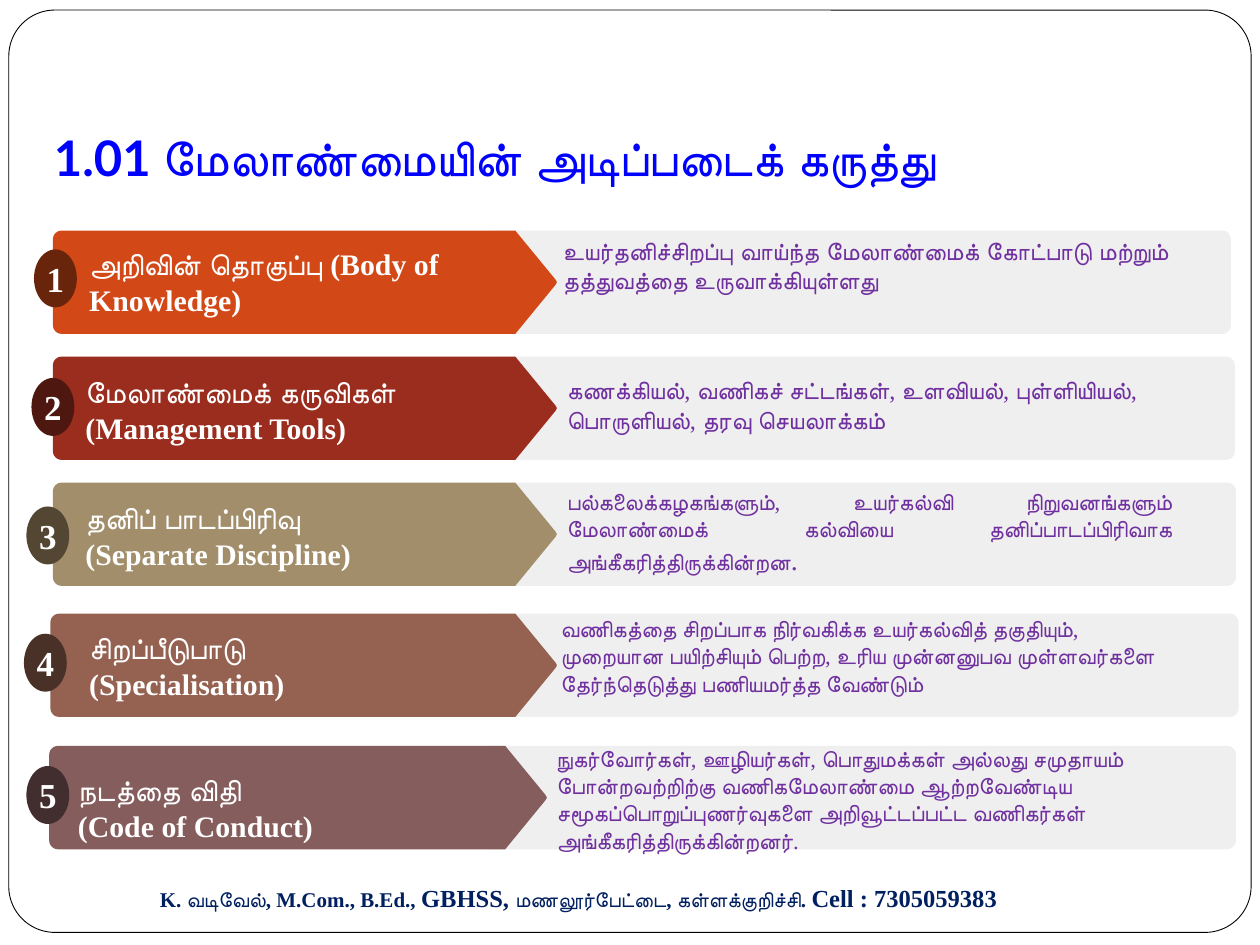
from math import cos, radians, sin

from pptx import Presentation
from pptx.dml.color import RGBColor
from pptx.enum.shapes import MSO_SHAPE
from pptx.enum.text import MSO_ANCHOR, PP_ALIGN
from pptx.util import Pt

ROUND, OVAL = MSO_SHAPE.ROUNDED_RECTANGLE, MSO_SHAPE.OVAL
TOP, MIDDLE, BOTTOM = MSO_ANCHOR.TOP, MSO_ANCHOR.MIDDLE, MSO_ANCHOR.BOTTOM
LEFT, CENTER, JUSTIFY = PP_ALIGN.LEFT, PP_ALIGN.CENTER, PP_ALIGN.JUSTIFY

PX = 9144  # 100 px to the inch
RADIUS = 7
SERIF = "Times New Roman"
COLORS = {
    "white": "FFFFFF", "black": "000000", "title": "0000FF",
    "panel": "EFEFEF", "body": "7030A0", "footer": "002060",
}

# box, tip of the arrow, arrow and badge colours, badge offset,
# label offset and width, label, body offset and width, size, alignment, body
ROWS = [
    ((42, 183, 935, 82), 400, "D34817", "69240C", (-15, 15),
     (19, 7, 333), "அறிவின் தொகுப்பு (Body of Knowledge)",
     (395, -1, 500), 14, JUSTIFY,
     "உயர்தனிச்சிறப்பு வாய்ந்த மேலாண்மைக் கோட்பாடு மற்றும் தத்துவத்தை "
     "உருவாக்கியுள்ளது"),
    ((42, 283, 938, 82), 400, "9B2D1F", "4E1710", (-17, 17),
     (16, 9, 392), "மேலாண்மைக் கருவிகள் (Management Tools)",
     (398, 10, 508), 14, LEFT,
     "கணக்கியல், வணிகச் சட்டங்கள், உளவியல், புள்ளியியல், பொருளியல், "
     "தரவு செயலாக்கம்"),
    ((42, 383, 939, 82), 400, "A28E6A", "534733", (-21, 19),
     (16, 9, 292), "தனிப் பாடப்பிரிவு (Separate Discipline)",
     (398, -1, 500), 13, JUSTIFY,
     "பல்கலைக்கழகங்களும், உயர்கல்வி நிறுவனங்களும் மேலாண்மைக் கல்வியை "
     "தனிப்பாடப்பிரிவாக அங்கீகரித்திருக்கின்றன"),
    ((40, 487, 943, 82), 402, "956251", "4A3128", (-21, 16),
     (21, 8, 312), "சிறப்பீடுபாடு\n(Specialisation)",
     (395, -4, 508), 13, LEFT,
     "வணிகத்தை சிறப்பாக நிர்வகிக்க உயர்கல்வித் தகுதியும், முறையான "
     "பயிற்சியும் பெற்ற, உரிய முன்னனுபவ முள்ளவர்களை தேர்ந்தெடுத்து "
     "பணியமர்த்த வேண்டும்"),
    ((39, 592, 942, 82), 395, "855D5D", "422E2E", (-18, 16),
     (13, 16, 352), "நடத்தை விதி\n(Code of Conduct)",
     (393, -6, 560), 13, LEFT,
     "நுகர்வோர்கள், ஊழியர்கள், பொதுமக்கள் அல்லது சமுதாயம் "
     "போன்றவற்றிற்கு வணிகமேலாண்மை ஆற்றவேண்டிய "
     "சமூகப்பொறுப்புணர்வுகளை அறிவூட்டப்பட்ட வணிகர்கள் "
     "அங்கீகரித்திருக்கின்றனர்."),
]


def emu(*values):
    return [round(v * PX) for v in values]


def rgb(color):
    return RGBColor.from_string(COLORS.get(color, color))


def paint(shape, fill):
    shape.shadow.inherit = False
    shape.fill.solid()
    shape.fill.fore_color.rgb = rgb(fill)
    shape.line.fill.background()
    return shape


def style(frame, size, color, bold=False, align=LEFT, font=SERIF):
    for para in frame.paragraphs:
        para.alignment = align
        para.font.name = font
        para.font.size = Pt(size)
        para.font.bold = bold
        para.font.color.rgb = rgb(color)


def add_text(slide, box, words, size, color, anchor=TOP, **looks):
    frame = slide.shapes.add_textbox(*emu(*box)).text_frame
    frame.word_wrap = True
    frame.vertical_anchor = anchor
    frame.text = words
    style(frame, size, color, **looks)
    return frame


def add_runs(para, parts):
    for words, size in parts:
        run = para.add_run()
        run.text = words
        run.font.size = Pt(size)


def arc(x, y, start):
    """Points of a quarter circle about x, y, clockwise from a start angle."""
    angles = [radians(start + step) for step in range(0, 91, 15)]
    return [(x + RADIUS * cos(a), y + RADIUS * sin(a)) for a in angles]


def outline(slide, points, fill):
    first, *rest = [emu(*point) for point in points]
    builder = slide.shapes.build_freeform(*first, scale=1.0)
    builder.add_line_segments(rest, close=True)
    paint(builder.convert_to_shape(), fill)


def panel(slide, box):
    x, y, w, h = box
    edge = x + w - RADIUS
    points = [(x, y + h), (x, y)]
    points += arc(edge, y + RADIUS, -90) + arc(edge, y + h - RADIUS, 0)
    outline(slide, points, "panel")


def arrow(slide, box, fill):
    x, y, w, h = box
    tip, neck, mid = x + w, x + w - 33, y + h / 2
    points = arc(x + RADIUS, y + h - RADIUS, 90)
    points += arc(x + RADIUS, y + RADIUS, 180)
    points += [(neck, y), (tip - 1, mid - 2), (tip, mid),
               (tip - 1, mid + 2), (neck, y + h)]
    outline(slide, points, fill)


def badge(slide, box, number, fill):
    shape = paint(slide.shapes.add_shape(OVAL, *emu(*box)), fill)
    frame = shape.text_frame
    frame.margin_left = frame.margin_right = 0
    frame.margin_top = frame.margin_bottom = 0
    frame.word_wrap = False
    frame.vertical_anchor = MIDDLE
    frame.text = str(number)
    style(frame, 20, "white", bold=True, align=CENTER)


def add_row(slide, number, box, tip, fill, dark, spot, head, label,
            side, size, align, body):
    x, y, w, h = box
    panel(slide, (x + 349, y, w - 349, h))
    frame = add_text(slide, (x + side[0], y + side[1], side[2], h),
                     body, size, "body", align=align)
    arrow(slide, (x, y, tip, h), fill)
    badge(slide, (x + spot[0], y + spot[1], 34, 46), number, dark)
    add_text(slide, (x + head[0], y + head[1], head[2], 67),
             label, 17, "white", bold=True)
    return frame


def add_frame(slide, box):
    shape = paint(slide.shapes.add_shape(ROUND, *emu(*box)), "white")
    shape.adjustments[0] = 0.05
    shape.line.color.rgb = rgb("black")
    shape.line.width = Pt(0.5)


def add_title(slide, box):
    frame = add_text(slide, box, "1.01 மேலாண்மையின் அடிப்படைக் கருத்து",
                     28, "title", BOTTOM, bold=True, font="Lato")
    frame.margin_bottom = 10 * PX


def add_footer(slide, box):
    frame = add_text(slide, box, "", 12, "footer", bold=True)
    add_runs(frame.paragraphs[0], [
        ("K. வடிவேல், M.Com., B.Ed., ", 12), ("GBHSS, ", 14),
        ("மணலூர்பேட்டை, கள்ளக்குறிச்சி. ", 12),
        ("Cell : 7305059383", 14)])


def main():
    deck = Presentation()
    deck.slide_width, deck.slide_height = emu(1000, 750)
    slide = deck.slides.add_slide(deck.slide_layouts[6])
    add_frame(slide, (7, 8, 986, 732))
    add_title(slide, (33, 33, 942, 125))
    bodies = [add_row(slide, number, *row)
              for number, row in enumerate(ROWS, 1)]
    add_runs(bodies[2].paragraphs[0], [(".", 16)])
    add_footer(slide, (117, 696, 783, 54))
    deck.save("out.pptx")


if __name__ == "__main__":
    main()
